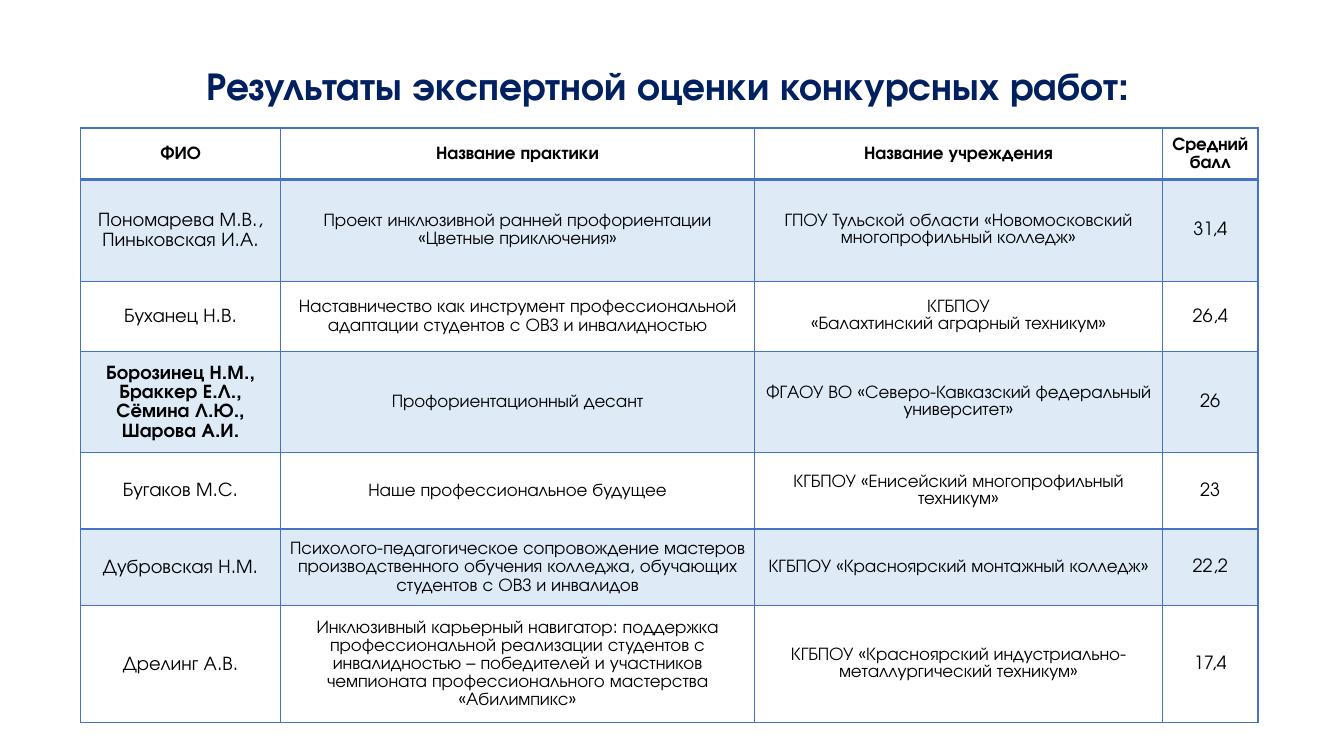
from dataclasses import dataclass

from lxml import etree
from pptx import Presentation
from pptx import util as u
from pptx.dml.color import RGBColor
from pptx.enum import text
from pptx.oxml import ns


@dataclass(frozen=True)
class Theme:
    font: str = "TeX Gyre Adventor"
    navy: str = "002060"
    ink: str = "000000"
    border: str = "4472C4"
    plain: str = "FFFFFF"
    band: str = "DEEBF7"
    title_size: int = 28
    name_size: int = 14
    body_size: int = 13
    thin: int = 1
    thick: int = 2


@dataclass(frozen=True)
class Entry:
    authors: str
    practice: str
    institution: str
    score: str
    height: float = 54.72
    bold_authors: bool = False


@dataclass(frozen=True)
class Style:
    size: int
    color: str
    bold: bool = False
    spacing: float = 1.07


THEME = Theme()
TITLE = "Результаты экспертной оценки конкурсных работ:"
COLUMN_WIDTHS = (142.8, 338.4, 291.6, 68.2)
HEADER = Entry("ФИО", "Название практики", "Название учреждения", "Средний балл", 36.72)
ENTRIES = (
    Entry("Пономарева М.В., Пиньковская И.А.",
          "Проект инклюзивной ранней профориентации\n«Цветные приключения»",
          "ГПОУ Тульской области «Новомосковский многопрофильный колледж»", "31,4", 72.72),
    Entry("Буханец Н.В.",
          "Наставничество как инструмент профессиональной адаптации студентов с ОВЗ "
          "и инвалидностью",
          "КГБПОУ\n«Балахтинский аграрный техникум»", "26,4", 50.4),
    Entry("Борозинец Н.М., Браккер Е.Л., Сёмина Л.Ю., Шарова А.И.",
          "Профориентационный десант",
          "ФГАОУ ВО «Северо-Кавказский федеральный университет»", "26", bold_authors=True),
    Entry("Бугаков М.С.", "Наше профессиональное будущее",
          "КГБПОУ «Енисейский многопрофильный техникум»", "23"),
    Entry("Дубровская Н.М.",
          "Психолого-педагогическое сопровождение мастеров производственного обучения "
          "колледжа, обучающих студентов с ОВЗ и инвалидов",
          "КГБПОУ «Красноярский монтажный колледж»", "22,2"),
    Entry("Дрелинг А.В.",
          "Инклюзивный карьерный навигатор: поддержка профессиональной реализации "
          "студентов с инвалидностью – победителей и участников чемпионата "
          "профессионального мастерства «Абилимпикс»",
          "КГБПОУ «Красноярский индустриально-металлургический техникум»", "17,4"),
)


def write(frame, content: str, style: Style) -> None:
    """Fill a text frame with one centred paragraph per line of content."""
    frame.word_wrap = True
    for index, line in enumerate(content.split("\n")):
        para = frame.add_paragraph() if index else frame.paragraphs[0]
        para.alignment = text.PP_ALIGN.CENTER
        para.line_spacing = style.spacing
        span = para.add_run()
        span.text = line
        formats = {"name": THEME.font, "size": u.Pt(style.size), "bold": style.bold}
        for name, value in formats.items():
            setattr(span.font, name, value)
        span.font.color.rgb = RGBColor.from_string(style.color)


def add_borders(cell, top: int, bottom: int) -> None:
    properties = cell._tc.get_or_add_tcPr()
    widths = {"L": THEME.thin, "R": THEME.thin, "T": top, "B": bottom}
    for side, width in widths.items():
        line = etree.SubElement(properties, ns.qn(f"a:ln{side}"), w=str(u.Pt(width)))
        fill = etree.SubElement(line, ns.qn("a:solidFill"))
        etree.SubElement(fill, ns.qn("a:srgbClr"), val=THEME.border)


def format_cell(cell, fill: str, top: int, bottom: int) -> None:
    formats = {
        "margin_left": u.Pt(5), "margin_right": u.Pt(5),
        "margin_top": u.Pt(0), "margin_bottom": u.Pt(0),
        "vertical_anchor": text.MSO_ANCHOR.MIDDLE,
    }
    for name, value in formats.items():
        setattr(cell, name, value)
    add_borders(cell, top, bottom)
    cell.fill.solid()
    cell.fill.fore_color.rgb = RGBColor.from_string(fill)


def fill_row(table, index: int, entry: Entry) -> None:
    is_header = index == 0
    table.rows[index].height = u.Pt(entry.height)
    body = Style(THEME.body_size, THEME.ink)
    styles = (
        Style(THEME.name_size, THEME.ink, entry.bold_authors),
        body,
        Style(THEME.body_size, THEME.ink, spacing=1.0),
        body,
    )
    if is_header:
        styles = (Style(THEME.body_size, THEME.ink, True),) * len(COLUMN_WIDTHS)
    contents = (entry.authors, entry.practice, entry.institution, entry.score)
    fill = THEME.band if index % 2 else THEME.plain
    top = THEME.thick if index == 1 else THEME.thin
    bottom = THEME.thick if is_header else THEME.thin
    for cell, content, style in zip(table.rows[index].cells, contents, styles):
        format_cell(cell, fill, top, bottom)
        write(cell.text_frame, content, style)


def add_title(page) -> None:
    box = page.shapes.add_textbox(u.Pt(34.56), u.Pt(10.8), u.Pt(885.6), u.Pt(104.4))
    box.text_frame.vertical_anchor = text.MSO_ANCHOR.MIDDLE
    write(box.text_frame, TITLE, Style(THEME.title_size, THEME.navy, True, 0.9))


def add_results(page) -> None:
    rows = (HEADER, *ENTRIES)
    table = page.shapes.add_table(
        len(rows), len(COLUMN_WIDTHS), u.Pt(57.6), u.Pt(91.44),
        u.Pt(sum(COLUMN_WIDTHS)), u.Pt(sum(row.height for row in rows)),
    ).table
    table.horz_banding = False
    for column, width in zip(table.columns, COLUMN_WIDTHS):
        column.width = u.Pt(width)
    for index, entry in enumerate(rows):
        fill_row(table, index, entry)


def main() -> None:
    deck = Presentation()
    deck.slide_width, deck.slide_height = u.Pt(960), u.Pt(540)
    page = deck.slides.add_slide(deck.slide_layouts[6])
    add_title(page)
    add_results(page)
    deck.save("out.pptx")


if __name__ == "__main__":
    main()
